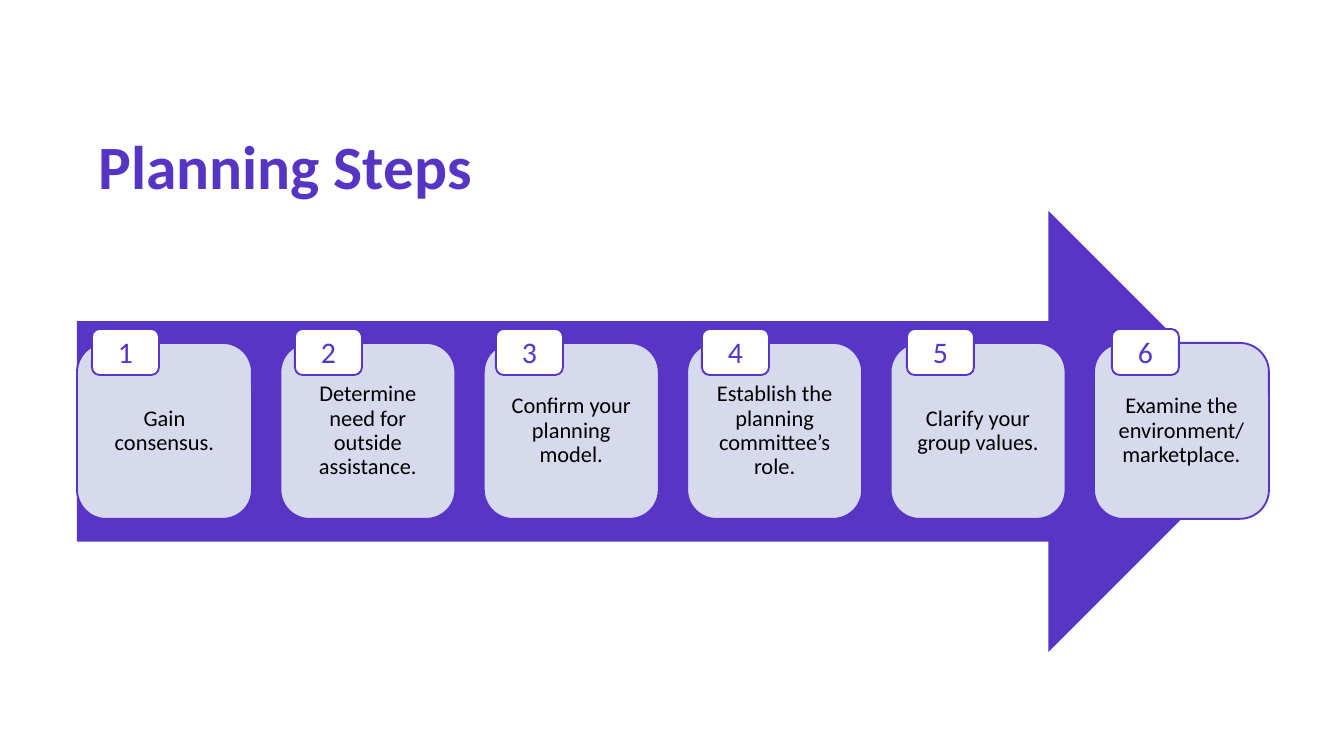
"""Build the Planning Steps slide: six numbered cards along an arrow."""
from pptx import Presentation
from pptx import util as u
from pptx.dml.color import RGBColor
from pptx.enum import shapes, text

TITLE = "Planning Steps"
STEPS = [
    (92, ["Gain consensus."]),
    (295, ["Determine need for outside assistance."]),
    (496, ["Confirm your planning model."]),
    (702, ["Establish the planning committee’s role."]),
    (907, ["Clarify your group values."]),
    (1112, ["Examine the environment/", "marketplace."]),
]
INK = {"main": "5736C5", "title": "5735C4", "card": "D7D9ED",
       "badge": "FFFFFF", "text": "000000"}
FONT = "Calibri"
WIDE, HIGH = 1344, 756
ARROW = (77, 211, 1192, 441)
CARD_TOP, CARD_W, CARD_H = 343, 175, 176
BADGE_TOP, BADGE_W, BADGE_H = 329, 67, 46
INSET = 7
STEP = (ARROW[2] - CARD_W) / (len(STEPS) - 1)


def px(n):
    return u.Emu(round(n * 9144000 / WIDE))


def tint(name):
    return RGBColor.from_string(INK[name])


def write(frame, lines, size, color, space=None, bold=False):
    frame.word_wrap = True
    frame.vertical_anchor = text.MSO_ANCHOR.MIDDLE
    for i, line in enumerate(lines):
        para = frame.add_paragraph() if i else frame.paragraphs[0]
        para.line_spacing = space
        run = para.add_run()
        run.text = line
        run.font.name, run.font.size, run.font.bold = FONT, u.Pt(size), bold
        run.font.color.rgb = tint(color)


def center(frame):
    for para in frame.paragraphs:
        para.alignment = text.PP_ALIGN.CENTER


def draw(slide, kind, box, fill, edge=True):
    shape = slide.shapes.add_shape(kind, *map(px, box))
    shape.shadow.inherit = False
    shape.fill.solid()
    shape.fill.fore_color.rgb = tint(fill)
    if edge:
        shape.line.color.rgb = tint("main")
        shape.line.width = u.Pt(1)
    else:
        shape.line.fill.background()
    return shape


def main():
    deck = Presentation()
    deck.slide_width, deck.slide_height = px(WIDE), px(HIGH)
    slide = deck.slides.add_slide(deck.slide_layouts[5])
    kind = shapes.MSO_SHAPE

    title = slide.shapes.title
    title.left, title.top, title.width, title.height = map(px, (85, 130, 1159, 79))
    write(title.text_frame, [TITLE], 33, "title", 0.9, True)
    title.text_frame.paragraphs[0].alignment = text.PP_ALIGN.LEFT

    draw(slide, kind.RIGHT_ARROW, ARROW, "main", False)
    for i, (_, lines) in enumerate(STEPS):
        box = (ARROW[0] + i * STEP, CARD_TOP, CARD_W, CARD_H)
        frame = draw(slide, kind.ROUNDED_RECTANGLE, box, "card").text_frame
        frame.margin_left = frame.margin_right = px(INSET)
        frame.margin_top = frame.margin_bottom = px(INSET)
        write(frame, lines, 12, "text", 0.9)
        center(frame)

    for i, (left, _) in enumerate(STEPS, 1):
        box = (left, BADGE_TOP, BADGE_W, BADGE_H)
        frame = draw(slide, kind.ROUNDED_RECTANGLE, box, "badge").text_frame
        write(frame, [str(i)], 16, "main")
        center(frame)

    deck.save("out.pptx")


if __name__ == "__main__":
    main()
